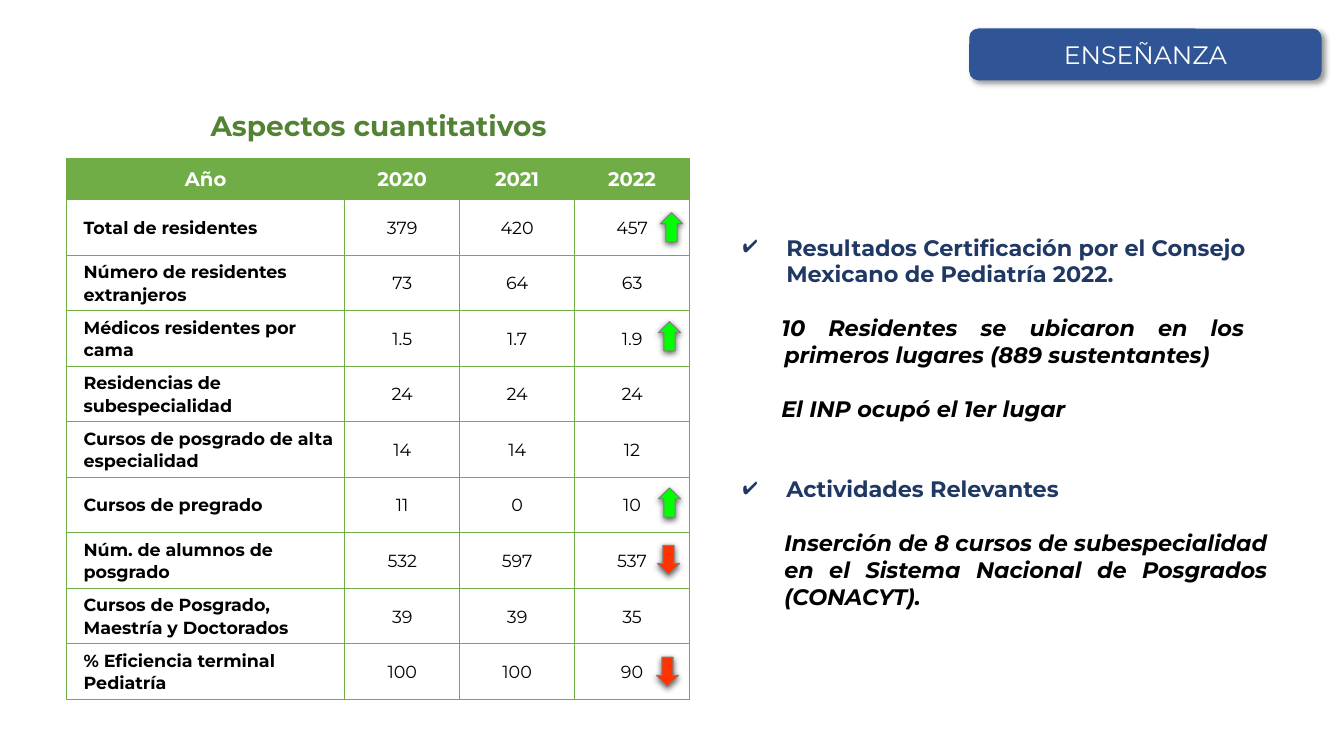
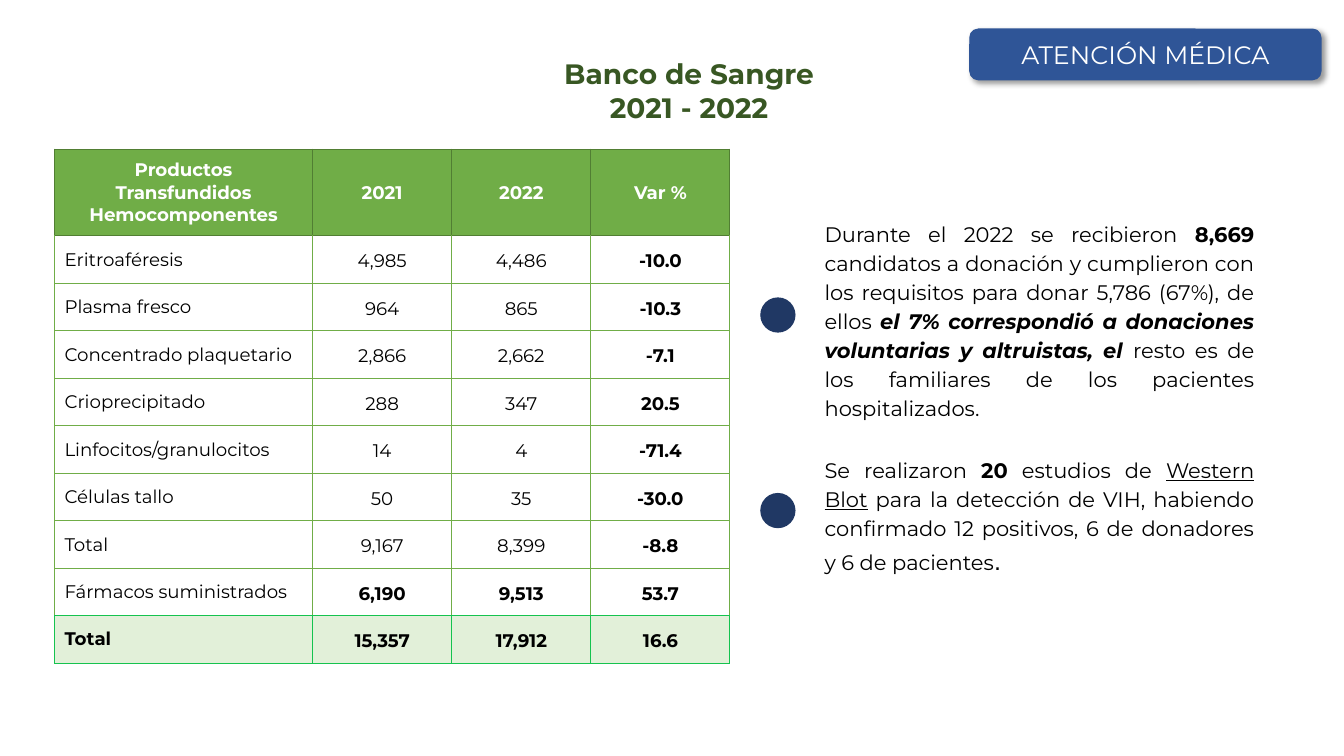
from lxml import etree
from pptx import Presentation
from pptx.dml.color import RGBColor
from pptx.enum.shapes import MSO_SHAPE
from pptx.enum.text import MSO_ANCHOR, MSO_AUTO_SIZE, PP_ALIGN
from pptx.oxml.ns import qn
from pptx.util import Inches, Pt

LEFT, MID, JUST = PP_ALIGN.LEFT, PP_ALIGN.CENTER, PP_ALIGN.JUSTIFY
TOP, CENTER = MSO_ANCHOR.TOP, MSO_ANCHOR.MIDDLE
FIXED = MSO_AUTO_SIZE.NONE
ROUND, OVAL = MSO_SHAPE.ROUNDED_RECTANGLE, MSO_SHAPE.OVAL
UP, DOWN = MSO_SHAPE.UP_ARROW, MSO_SHAPE.DOWN_ARROW

FONT = "Montserrat"
WHITE, BLACK, GREY = "FFFFFF", "000000", "808080"
GREEN, LEAF, MOSS, PINE = "70AD47", "548235", "517E33", "385723"
PALE, MINT = "E2F0D9", "15C34F"
BLUE, NAVY, DOT = "2F5597", "1F3864", "203864"
RISE, FALL = "00FF00", "FF3300"
BADGE = (9.62, 0.29, 3.48, 0.5)

STAFF = [
    ("Año", "2020", "2021", "2022"),
    ("Total de residentes", "379", "420", "457"),
    ("Número de residentes extranjeros", "73", "64", "63"),
    ("Médicos residentes por cama", "1.5", "1.7", "1.9"),
    ("Residencias de subespecialidad", "24", "24", "24"),
    ("Cursos de posgrado de alta especialidad", "14", "14", "12"),
    ("Cursos de pregrado", "11", "0", "10"),
    ("Núm. de alumnos de posgrado", "532", "597", "537"),
    ("Cursos de Posgrado, Maestría y Doctorados", "39", "39", "35"),
    ("% Eficiencia terminal Pediatría", "100", "100", "90"),
]
TRENDS = [
    (6.55, 2.11, UP), (6.53, 3.19, UP), (6.53, 4.84, UP),
    (6.52, 5.41, DOWN), (6.51, 6.52, DOWN),
]
BLOOD = [
    ("Productos Transfundidos Hemocomponentes", "2021", "2022", "Var %"),
    ("Eritroaféresis", "4,985", "4,486", "-10.0"),
    ("Plasma fresco", "964", "865", "-10.3"),
    ("Concentrado plaquetario", "2,866", "2,662", "-7.1"),
    ("Crioprecipitado", "288", "347", "20.5"),
    ("Linfocitos/granulocitos", "14", "4", "-71.4"),
    ("Células tallo", "50", "35", "-30.0"),
    ("Total", "9,167", "8,399", "-8.8"),
    ("Fármacos suministrados", "6,190", "9,513", "53.7"),
    ("Total", "15,357", "17,912", "16.6"),
]
DONORS = [
    ("Durante el 2022 se recibieron ", {}),
    ("8,669", {"bold": True}),
    (" candidatos a donación y cumplieron con los requisitos para donar "
     "5,786 (67%), de ellos ", {}),
    ("el 7% correspondió a donaciones voluntarias y altruistas, el ",
     {"bold": True, "ital": True}),
    ("resto es de los familiares de los pacientes hospitalizados.", {}),
]
TESTS = [
    ("Se realizaron ", {}),
    ("20", {"bold": True}),
    (" estudios de ", {}),
    ("Western Blot", {"under": True}),
    (" para la detección de VIH, habiendo confirmado 12 positivos, "
     "6 de donadores y 6 de pacientes", {}),
    (".", {"size": 18, "font": "Arial"}),
]


def rgb(code):
    """Turn a hex string into a colour."""
    return RGBColor.from_string(code)


def box(nums):
    """Turn four numbers into lengths."""
    return [Inches(n) for n in nums]


def add(node, tag, **attrs):
    """Append an XML child with attributes."""
    return etree.SubElement(node, qn(tag), {k: str(v) for k, v in attrs.items()})


def style(run, size=16, hue=BLACK, bold=False, ital=False, under=False, font=FONT):
    """Format one run."""
    face = run.font
    face.name, face.size, face.color.rgb = font, Pt(size), rgb(hue)
    face.bold, face.italic, face.underline = bold, ital, under


def write(frame, text, align=LEFT, line=None, gap=0, after=0, left=0, hang=0,
          right=0, mark=None, **fmt):
    """Add a paragraph given as a string or as (text, format) runs."""
    par = frame.paragraphs[0]
    if par.runs:
        par = frame.add_paragraph()
    props = par._p.get_or_add_pPr()
    for key, size in (("marL", left), ("marR", right), ("indent", hang)):
        props.set(key, str(int(Inches(size))))
    if mark:
        add(add(props, "a:buClr"), "a:srgbClr", val=fmt["hue"])
        add(props, "a:buChar", char=mark)
    par.alignment = align
    par.space_before, par.space_after = Pt(gap), Pt(after)
    if line:
        par.line_spacing = line
    for words, extra in [(text, {})] if isinstance(text, str) else text:
        run = par.add_run()
        run.text = words
        style(run, **{**fmt, **extra})


def setup(frame, anchor=TOP):
    """Wrap a frame at a fixed size."""
    frame.word_wrap, frame.auto_size = True, FIXED
    frame.vertical_anchor = anchor
    frame.margin_left = frame.margin_right = Inches(0.1)
    frame.margin_top = frame.margin_bottom = Inches(0.05)
    return frame


def note(slide, *place):
    """Add a text box and return its frame."""
    return setup(slide.shapes.add_textbox(*box(place)).text_frame)


def form(slide, kind, place, fill, edge=None, width=1, shade=None):
    """Add a filled shape; shade is alpha, blur, distance and angle."""
    shape = slide.shapes.add_shape(kind, *box(place))
    shape.shadow.inherit = False
    shape.fill.solid()
    shape.fill.fore_color.rgb = rgb(fill)
    if edge:
        shape.line.color.rgb, shape.line.width = rgb(edge), Pt(width)
    else:
        shape.line.fill.background()
    if shade:
        alpha, blur, dist, angle = shade
        glow = add(shape.element.spPr.find(qn("a:effectLst")), "a:outerShdw",
                   blurRad=int(Pt(blur)), dist=int(Pt(dist)),
                   dir=angle * 60000, rotWithShape=0)
        add(add(glow, "a:srgbClr", val=BLACK), "a:alpha", val=alpha * 1000)
    return shape


def start(deck, topic, lines, place, hue):
    """Add a slide with its title and topic badge."""
    slide = deck.slides.add_slide(deck.slide_layouts[5])
    title = slide.shapes.title
    title.left, title.top, title.width, title.height = box(place)
    frame = setup(title.text_frame, CENTER)
    for text in lines:
        write(frame, text, MID, size=20, hue=hue, bold=True)
    badge = form(slide, ROUND, BADGE, BLUE, BLUE, shade=(40, 4, 3, 45))
    write(setup(badge.text_frame, CENTER), topic, MID, size=18, hue=WHITE)
    return slide


def edges(cell, hues, width):
    """Draw the left, right, top and bottom borders of a cell."""
    props = cell._tc.get_or_add_tcPr()
    for side, hue in zip("LRTB", hues):
        line = add(props, "a:ln" + side, w=int(Pt(width)))
        add(add(line, "a:solidFill"), "a:srgbClr", val=hue)


def grid(slide, place, cols, head, rows, look):
    """Add a table; look(row, col) gives fill, borders, margins and format."""
    frame = slide.shapes.add_table(len(rows), len(cols), *box(place))
    table = frame.table
    table.first_row = table.horz_banding = False
    for col, width in zip(table.columns, cols):
        col.width = Inches(width)
    step = (place[3] - head) / (len(rows) - 1)
    for r, row in enumerate(rows):
        table.rows[r].height = Inches(step if r else head)
        for c, text in enumerate(row):
            cell = table.cell(r, c)
            fill, hues, width, pads, fmt = look(r, c)
            edges(cell, hues, width)
            cell.fill.solid()
            cell.fill.fore_color.rgb = rgb(fill)
            cell.vertical_anchor = CENTER
            cell.margin_left = cell.margin_right = Inches(pads[0])
            cell.margin_top = cell.margin_bottom = Inches(pads[1])
            write(cell.text_frame, text, **fmt)


def staff_look(r, c):
    """Style a cell of the residents table."""
    fmt = {"align": MID, "line": 1.07, "size": 12.5}
    if r == 0:
        fmt.update(size=14, hue=WHITE, bold=True)
    elif c == 0:
        fmt.update(align=LEFT, left=0.1, bold=True)
    return (WHITE if r else GREEN), [GREEN] * 4, 0.5, (0.07, 0), fmt


def blood_look(r, c):
    """Style a cell of the blood bank table."""
    last = len(BLOOD) - 1
    fill = {0: GREEN, last: PALE}.get(r, WHITE)
    side = {0: MOSS, last: MINT}.get(r, GREEN)
    top = MOSS if r == 1 else side
    base = MINT if r == last - 1 else side
    fmt = {"align": MID if c or not r else LEFT, "size": 13}
    if r == 0:
        fmt.update(hue=WHITE, bold=True)
    else:
        fmt["bold"] = r == last or c == 3 or (r == last - 1 and c > 0)
        fmt["line"] = 1.15 if c else None
    return fill, [side, side, top, base], 0.75, (0.1, 0.1), fmt


def teach(deck):
    """Build the teaching slide."""
    slide = start(deck, "ENSEÑANZA", ["Aspectos cuantitativos"],
                  (0.66, 1.02, 6.19, 0.44), LEAF)
    grid(slide, (0.66, 1.57, 6.19, 5.37), [2.76] + [1.14] * 3, 0.41,
         STAFF, staff_look)
    for x, y, kind in TRENDS:
        form(slide, kind, (x, y, 0.22, 0.29), RISE if kind == UP else FALL,
             GREY, 0.75, (63, 4.5, 1.5, 90))
    frame = note(slide, 6.89, 2.27, 5.78, 4.44)
    point = {"left": 0.81, "hang": -0.43, "mark": "✔", "hue": NAVY, "bold": True}
    fact = {"align": JUST, "left": 0.79, "gap": 19.2, "bold": True, "ital": True}
    write(frame, "Resultados Certificación por el Consejo Mexicano de "
          "Pediatría 2022.", **point)
    write(frame, "10 Residentes se ubicaron en los primeros lugares "
          "(889 sustentantes)", hang=-0.03, right=0.23, **fact)
    write(frame, "El INP ocupó el 1er lugar", hang=-0.03, **fact)
    write(frame, "Actividades Relevantes", gap=38.4, **point)
    write(frame, "Inserción de 8 cursos de subespecialidad en el Sistema "
          "Nacional de Posgrados (CONACYT).", **fact)


def care(deck):
    """Build the medical care slide."""
    slide = start(deck, "ATENCIÓN MÉDICA", ["Banco de Sangre", "2021 - 2022"],
                  (2.8, 0.48, 8.07, 0.83), PINE)
    grid(slide, (0.54, 1.48, 6.69, 5.07), [2.56] + [1.38] * 3, 0.83,
         BLOOD, blood_look)
    frame = note(slide, 8.08, 2.11, 4.46, 3.86)
    for runs, gap in ((DONORS, 0), (TESTS, 12)):
        write(frame, runs, JUST, line=1.15, gap=gap, after=12, size=15)
    for y in (2.95, 4.89):
        form(slide, OVAL, (7.54, y, 0.35, 0.35), DOT)


def main():
    """Build and save the deck."""
    deck = Presentation()
    deck.slide_width, deck.slide_height = Inches(13.33), Inches(7.5)
    teach(deck)
    care(deck)
    deck.save("out.pptx")


if __name__ == "__main__":
    main()
